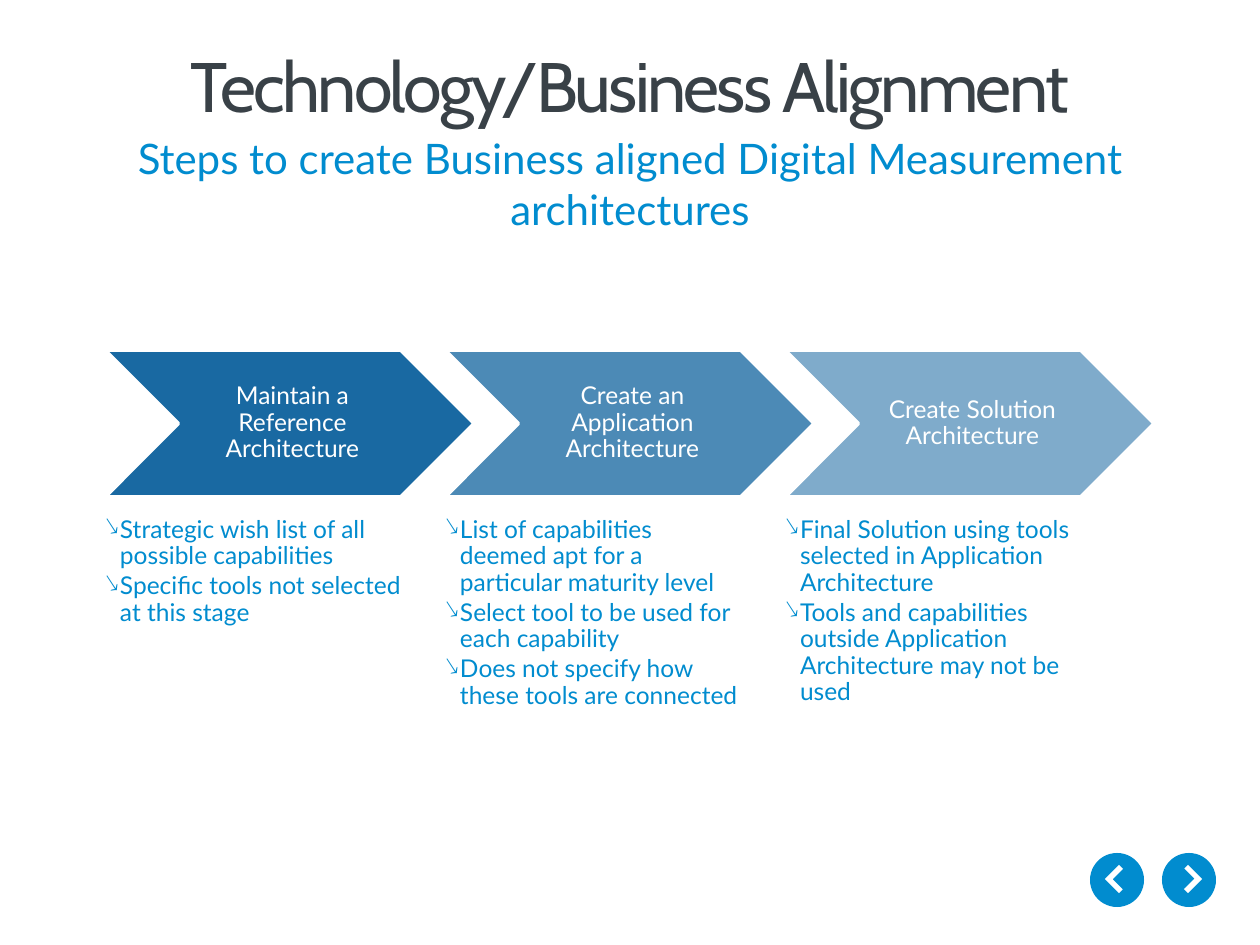
"""Builds a slide with three architecture steps, their notes and two round navigation buttons."""
import lxml.etree
import pptx
import pptx.dml.color
import pptx.enum.shapes
import pptx.enum.text
import pptx.oxml.ns
import pptx.util

SCALE = 914400 / 126
BLUE = pptx.dml.color.RGBColor(0x01, 0x8C, 0xCF)
NAVY = pptx.dml.color.RGBColor(0x01, 0x59, 0x98)
SLATE = pptx.dml.color.RGBColor(0x39, 0x41, 0x47)
WHITE = pptx.dml.color.RGBColor(0xFF, 0xFF, 0xFF)
KIND = pptx.enum.shapes.MSO_SHAPE
ALIGN = pptx.enum.text.PP_ALIGN
ANCHOR = pptx.enum.text.MSO_ANCHOR
qn = pptx.oxml.ns.qn

deck = pptx.Presentation()
deck.slide_width = pptx.util.Inches(10)
deck.slide_height = pptx.util.Inches(7.5)
slide = deck.slides.add_slide(deck.slide_layouts[6])


def put_text(lines, *, box, size, color, font="Lato", align=ALIGN.CENTER,
             anchor=ANCHOR.TOP, inset=(13, 6, 13, 6), space=1, after=0,
             track=0, bullet=None):
    """Add a text box with one paragraph per line."""
    frame = slide.shapes.add_textbox(*[round(n * SCALE) for n in box]).text_frame
    frame.word_wrap = True
    frame.vertical_anchor = anchor
    (frame.margin_left, frame.margin_top,
     frame.margin_right, frame.margin_bottom) = [round(n * SCALE) for n in inset]
    for i, line in enumerate(lines):
        para = frame.paragraphs[0] if i == 0 else frame.add_paragraph()
        if bullet:
            props = para._p.get_or_add_pPr()
            hang = round(15 * SCALE)
            props.set("marL", str(hang))
            props.set("indent", str(-hang))
            lxml.etree.SubElement(props, qn("a:buChar")).set("char", bullet)
        para.alignment = align
        para.line_spacing = space
        para.space_after = pptx.util.Pt(after)
        run = para.add_run()
        run.text = line
        run.font.name = font
        run.font.size = pptx.util.Pt(size)
        run.font.color.rgb = color
        if track:
            run.font._element.set("spc", str(track))


def put_shape(kind, box, color, turn=0):
    """Add a filled shape without outline or shadow."""
    shape = slide.shapes.add_shape(kind, *[round(n * SCALE) for n in box])
    shape.shadow.inherit = False
    shape.fill.solid()
    shape.fill.fore_color.rgb = color
    shape.line.fill.background()
    shape.rotation = turn
    return shape


for left, tip, turn in [(1162, 1178, 225), (1090, 1109, 45)]:
    put_shape(KIND.OVAL, (left, 853, 54, 54), BLUE)
    arrow = put_shape(KIND.CORNER, (tip, 869, 20, 20), WHITE, turn)
    arrow.adjustments[0] = 0.26
    arrow.adjustments[1] = 0.29

put_text(["Technology/Business Alignment"], box=(63, 42, 1134, 84), size=40,
         color=SLATE, font="Cabin", anchor=ANCHOR.MIDDLE, track=-150)
put_text(["Steps to create Business aligned Digital Measurement architectures"],
         box=(63, 127, 1134, 64), size=24, color=BLUE)

STEPS = [
    ("Maintain a Reference Architecture", 90,
     ["Strategic wish list of all possible capabilities",
      "Specific tools not selected at this stage"]),
    ("Create an Application Architecture", 70,
     ["List of capabilities deemed apt for a particular maturity level",
      "Select tool to be used for each capability",
      "Does not specify how these tools are connected"]),
    ("Create Solution Architecture", 50,
     ["Final Solution using tools selected in Application Architecture",
      "Tools and capabilities outside Application Architecture may not be used"]),
]
for i, (head, alpha, notes) in enumerate(STEPS):
    left = 105 + 340 * i
    step = put_shape(KIND.CHEVRON, (left, 350, 369, 147), NAVY)
    tint = step._element.spPr.find(qn("a:solidFill"))[0]
    lxml.etree.SubElement(tint, qn("a:alpha")).set("val", str(alpha * 1000))
    step.line.color.rgb = WHITE
    step.line.width = pptx.util.Pt(2)
    put_text([head], box=(left + 74, 350, 222, 147), size=14, color=WHITE,
             anchor=ANCHOR.MIDDLE, inset=(8, 3, 3, 3), space=0.9)
    put_text(notes, box=(left, 517, 296, 202), size=14, color=BLUE,
             align=ALIGN.LEFT, inset=(0, 0, 0, 0), space=0.9, after=2, bullet="↘")

deck.save("out.pptx")
